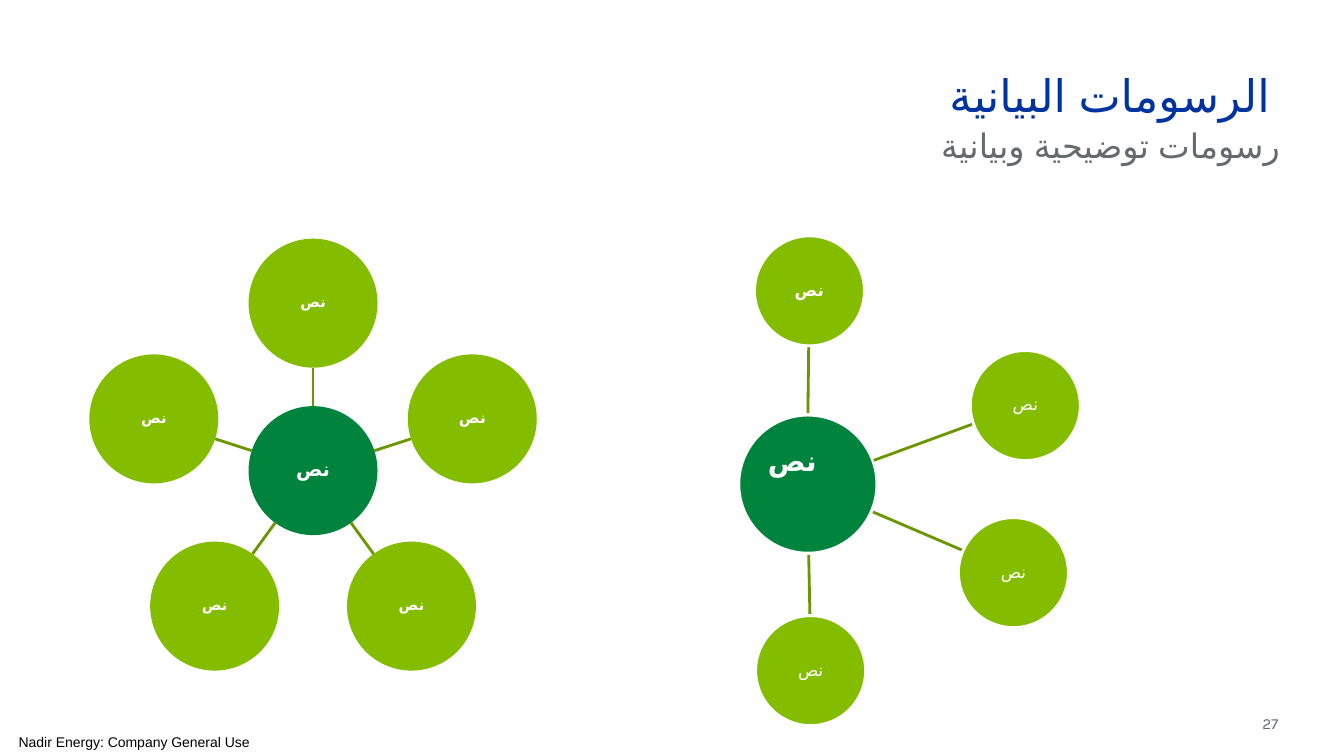
import math

import pptx
import pptx.dml.color
import pptx.enum.lang
import pptx.enum.shapes
import pptx.enum.text
import pptx.oxml
import pptx.oxml.ns
import pptx.util
from pptx.util import Cm

DARK_GREEN, LIME, SPOKE_GREEN = "00843D", "84BD00", "6A9700"
BLUE, GREY, WHITE, BLACK = "0033A0", "676A6C", "FFFFFF", "000000"
NODE_TEXT = "نص"
ALIGN = pptx.enum.text.PP_ALIGN
ANCHOR = pptx.enum.text.MSO_ANCHOR


def color(hex_value):
    return pptx.dml.color.RGBColor.from_string(hex_value)


def add_child(parent, tag, **attributes):
    child = pptx.oxml.parse_xml(f"<{tag} {pptx.oxml.ns.nsdecls('a')}/>")
    for name, value in attributes.items():
        child.set(name, value)
    parent.append(child)


def write(shape, text, size, font, hex_value, align, anchor=ANCHOR.MIDDLE,
          bold=False, insets=(0, 0), arabic=True):
    """Fill a shape with one formatted paragraph; insets are side and top, in cm."""
    frame = shape.text_frame
    frame.text = text
    frame.word_wrap = True
    frame.auto_size = pptx.enum.text.MSO_AUTO_SIZE.NONE
    frame.vertical_anchor = anchor
    frame.margin_left = frame.margin_right = Cm(insets[0])
    frame.margin_top = frame.margin_bottom = Cm(insets[1])
    paragraph = frame.paragraphs[0]
    paragraph.alignment = align
    run = paragraph.runs[0]
    run.font.size = pptx.util.Pt(size)
    run.font.name = font
    run.font.bold = bold
    run.font.color.rgb = color(hex_value)
    if arabic:
        paragraph._p.get_or_add_pPr().set("rtl", "1")
        run.font.language_id = pptx.enum.lang.MSO_LANGUAGE_ID.ARABIC
        add_child(run._r.get_or_add_rPr(), "a:cs", typeface=font)
    return paragraph


def place(shape, left, top, width, height):
    shape.left, shape.top = Cm(left), Cm(top)
    shape.width, shape.height = Cm(width), Cm(height)


def add_label(shapes, box, *text_arguments, **text_options):
    label = shapes.add_textbox(*map(Cm, box))
    write(label, *text_arguments, **text_options)


def add_circle(shapes, center, diameter, fill, outlined=False):
    left, top = (value - diameter / 2 for value in center)
    circle = shapes.add_shape(pptx.enum.shapes.MSO_SHAPE.OVAL, Cm(left), Cm(top),
                              Cm(diameter), Cm(diameter))
    circle.shadow.inherit = False
    circle.fill.solid()
    circle.fill.fore_color.rgb = color(fill)
    if outlined:
        circle.line.color.rgb = color(WHITE)
        circle.line.width = pptx.util.Pt(2)
    else:
        circle.line.fill.background()
    return circle


def write_node(circle, size, bold):
    paragraph = write(circle, NODE_TEXT, size, "Karla", WHITE, ALIGN.CENTER,
                      bold=bold, insets=(0.03, 0.03))
    paragraph.line_spacing = 0.9


def add_spoke(shapes, start, end):
    spoke = shapes.add_connector(pptx.enum.shapes.MSO_CONNECTOR.STRAIGHT,
                                 *map(Cm, (*start, *end)))
    spoke.line.color.rgb = color(SPOKE_GREEN)
    spoke.line.width = pptx.util.Pt(2)
    add_child(spoke._element.spPr, "a:effectLst")


def add_headings(slide):
    title, subtitle = slide.placeholders
    place(title, 19.69, 1.57, 12.57, 1.45)
    heading = write(title, "الرسومات البيانية", 32, "Arial", BLUE, ALIGN.RIGHT,
                    ANCHOR.TOP, insets=(0.25, 0.13))
    place(subtitle, 19.69, 3.02, 12.57, 1.45)
    subheading = write(subtitle, "رسومات توضيحية وبيانية", 24, "Arial", GREY,
                       ALIGN.RIGHT, ANCHOR.TOP, insets=(0, 0.13))
    for paragraph in (heading, subheading):
        paragraph.space_before = pptx.util.Pt(6)
    properties = subheading._p.get_or_add_pPr()
    properties.set("marL", "0")
    properties.set("indent", "0")
    add_child(properties, "a:buNone")


def add_pentagon_diagram(slide):
    """Five nodes spaced evenly around a hub."""
    shapes = slide.shapes.add_group_shape().shapes
    center, diameter, orbit = (7.89, 11.86), 3.25, 4.22

    def point(angle, radius):
        return (center[0] + radius * math.cos(angle),
                center[1] + radius * math.sin(angle))

    write_node(add_circle(shapes, center, diameter, DARK_GREEN), 14, True)
    for index, size in enumerate((10.5, 11, 10.5, 10.5, 10.5)):
        angle = math.radians(72 * index - 90)
        add_spoke(shapes, point(angle, diameter / 2),
                  point(angle, orbit - diameter / 2))
        node = add_circle(shapes, point(angle, orbit), diameter, LIME)
        write_node(node, size, True)


def add_fan_diagram(slide):
    """Four nodes fanned out to the right of a hub."""
    shapes = slide.shapes.add_group_shape().shapes
    branches = (  # node centre, spoke start, spoke end, bold
        ((20.4, 7.33), (20.36, 10.41), (20.38, 8.74), True),
        ((25.84, 10.22), (22.02, 11.6), (24.5, 10.69), False),
        ((25.54, 14.43), (22, 12.9), (24.24, 13.86), False),
        ((20.43, 16.9), (20.38, 13.98), (20.41, 15.47), False),
    )
    add_circle(shapes, (20.36, 12.2), 3.48, DARK_GREEN, outlined=True)
    for center, start, end, bold in branches:
        add_spoke(shapes, start, end)
        write_node(add_circle(shapes, center, 2.77, LIME, outlined=True), 12, bold)
    add_label(shapes, (18.24, 11.05, 3.45, 2.31), NODE_TEXT, 20, "Arial", WHITE,
              ALIGN.CENTER, ANCHOR.TOP, bold=True, insets=(0.25, 0.13))


def main():
    presentation = pptx.Presentation()
    presentation.slide_width, presentation.slide_height = Cm(33.87), Cm(19.05)
    slide = presentation.slides.add_slide(presentation.slide_layouts[1])
    add_headings(slide)
    add_pentagon_diagram(slide)
    add_fan_diagram(slide)
    add_label(slide.shapes, (31.22, 17.91, 1, 0.64), "27", 11, "Karla", "676A6E",
              ALIGN.RIGHT, insets=(0, 0.13), arabic=False)
    add_label(slide.shapes, (0.47, 18.36, 6.9, 0.69),
              "Nadir Energy: Company General Use", 10, "Arial", BLACK,
              ALIGN.LEFT, arabic=False)
    presentation.save("out.pptx")


if __name__ == "__main__":
    main()
